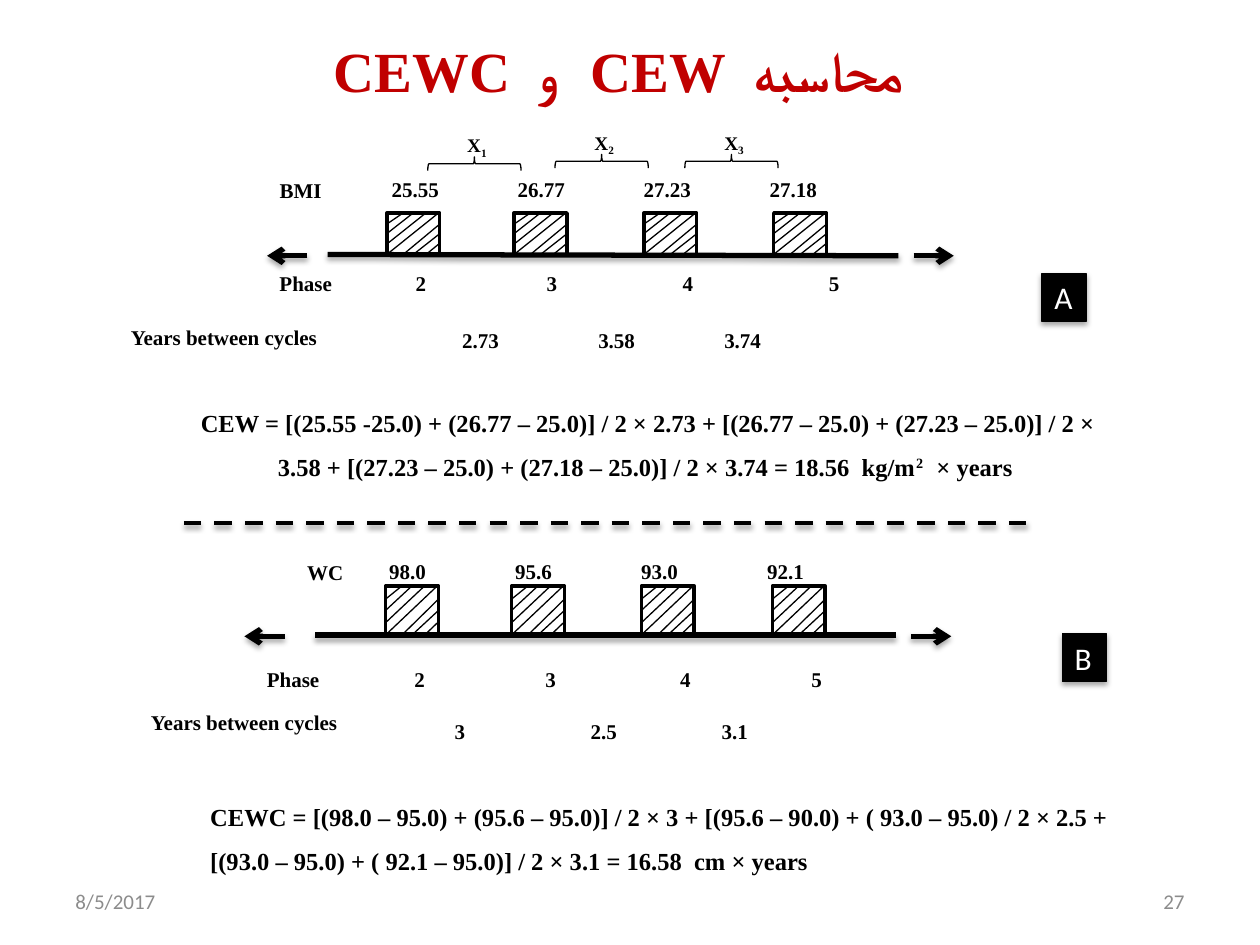
from pptx import Presentation
from pptx.dml.color import RGBColor
from pptx.enum import dml, shapes, text
from pptx.oxml import parse_xml
from pptx.oxml.ns import nsdecls
from pptx.util import Inches, Pt

BLACK = RGBColor(0, 0, 0)
WHITE = RGBColor(255, 255, 255)
RED = RGBColor(0xC0, 0, 0)
GRAY = RGBColor(0x8C, 0x8C, 0x8C)
SERIF, SANS = "Times New Roman", "Calibri"
LEFT, CENTER, RIGHT = text.PP_ALIGN.LEFT, text.PP_ALIGN.CENTER, text.PP_ALIGN.RIGHT
TOP, MIDDLE = text.MSO_ANCHOR.TOP, text.MSO_ANCHOR.MIDDLE

SHADOW = (
    f'<a:effectLst {nsdecls("a")}><a:outerShdw blurRad="39370" dist="22860" dir="5400000"'
    ' rotWithShape="0"><a:srgbClr val="000000"><a:alpha val="35000"/></a:srgbClr>'
    "</a:outerShdw></a:effectLst>"
)
NO_SHADOW = f'<a:effectLst {nsdecls("a")}/>'
ARROW = f'<a:tailEnd {nsdecls("a")} type="arrow"/>'

prs = Presentation()
prs.slide_width, prs.slide_height = Inches(10), Inches(7.5)
slide = prs.slides.add_slide(prs.slide_layouts[6])


def add_line(start, end, width, effect=NO_SHADOW, arrow=False, dash=None):
    points = [Inches(value) for value in (*start, *end)]
    line = slide.shapes.add_connector(shapes.MSO_CONNECTOR.STRAIGHT, *points)
    line.line.color.rgb = BLACK
    line.line.width = Pt(width)
    if dash:
        line.line.dash_style = dash
    if arrow:
        line.line._get_or_add_ln().append(parse_xml(ARROW))
    line._element.spPr.append(parse_xml(effect))


def add_text(box, runs, size=12, bold=True, color=BLACK, align=LEFT, anchor=TOP,
             wrap=True, spacing=None, tabs=()):
    """Add a text box; runs are (text, font, baseline in percent), tabs are in inches."""
    frame = slide.shapes.add_textbox(*map(Inches, box)).text_frame
    frame.word_wrap = wrap
    frame.vertical_anchor = anchor
    paragraph = frame.paragraphs[0]
    paragraph.alignment = align
    if spacing:
        paragraph.line_spacing = spacing
    if tabs:
        stops = "".join(f'<a:tab pos="{Inches(tab)}" algn="l"/>' for tab in tabs)
        paragraph._p.get_or_add_pPr().append(
            parse_xml(f'<a:tabLst {nsdecls("a")}>{stops}</a:tabLst>'))
    for wording, font, baseline in runs:
        run = paragraph.add_run()
        run.text = wording
        style = {"name": font, "size": Pt(size), "bold": bold}
        for attribute, value in style.items():
            setattr(run.font, attribute, value)
        run.font.color.rgb = color
        if baseline:
            run._r.get_or_add_rPr().set("baseline", str(baseline * 1000))


# Title and footer
add_text((0.48, 0.28, 9, 0.55),
         [(" CEWC  ", SERIF, 0), ("و  ", SANS, 0), ("CEW  ", SERIF, 0), ("محاسبه  ", SANS, 0)],
         size=32.4, color=RED, align=CENTER, anchor=MIDDLE)
for left, footer, align in [(0.5, "8/5/2017", LEFT), (7.17, "27", RIGHT)]:
    add_text((left, 6.95, 2.33, 0.4), [(footer, SANS, 0)],
             bold=False, color=GRAY, align=align, anchor=MIDDLE)

# Hatching of a phase box, as fractions of its width and height
HATCH = [
    ((0.31, 0), (0, 0.27)), ((0.5, 0), (0, 0.5)), ((0.71, 0.03), (0, 0.75)),
    ((0.95, 0.03), (0, 1)), ((1, 0.27), (0.31, 1)), ((1, 0.5), (0.5, 1)),
    ((1, 0.73), (0.74, 1)),
]
PHASE_WIDTH = 0.42

# Timelines: BMI above, waist circumference below
timelines = [
    {"phases": (3.07, 4.08, 5.11, 6.14), "top": 1.69, "height": 0.33,
     "axis": ((2.6, 2.02), (7.13, 2.03)), "arrow_y": 2.03, "arrows": ((2.44, 2.12), (7.25, 7.57)),
     "badge": ("A", 8.27, 2.17)},
    {"phases": (3.06, 4.06, 5.09, 6.13), "top": 4.65, "height": 0.39,
     "axis": ((2.5, 5.04), (7.11, 5.04)), "arrow_y": 5.05, "arrows": ((2.26, 1.94), (7.23, 7.55)),
     "badge": ("B", 8.43, 5.03)},
]
for timeline in timelines:
    top, height = timeline["top"], timeline["height"]
    for left in timeline["phases"]:
        for start, end in HATCH:
            add_line(*[(left + x * PHASE_WIDTH, top + y * height) for x, y in (start, end)], 0.75)
        phase = slide.shapes.add_shape(
            shapes.MSO_SHAPE.RECTANGLE, *map(Inches, (left, top, PHASE_WIDTH, height)))
        phase.shadow.inherit = False
        phase.fill.background()
        phase.line.color.rgb = BLACK
        phase.line.width = Pt(2)

    add_line(*timeline["axis"], 3, SHADOW)
    for start, end in timeline["arrows"]:
        y = timeline["arrow_y"]
        add_line((start, y), (end, y), 3, SHADOW, arrow=True)

    letter, left, badge_top = timeline["badge"]
    badge = slide.shapes.add_shape(
        shapes.MSO_SHAPE.RECTANGLE, *map(Inches, (left, badge_top, 0.35, 0.38)))
    badge.fill.solid()
    badge.fill.fore_color.rgb = BLACK
    badge.line.color.rgb = BLACK
    badge.line.width = Pt(0.75)
    badge._element.spPr.append(parse_xml(SHADOW))
    badge.text_frame.word_wrap = False
    badge.text_frame.text = letter
    badge.text_frame.paragraphs[0].alignment = LEFT
    letter_font = badge.text_frame.paragraphs[0].runs[0].font
    letter_font.name, letter_font.size = SANS, Pt(18)
    letter_font.color.rgb = WHITE

# Labels and values, with tab stops measured from the text edge
rows = [
    ((2.12, 1.36, 0.75, 0.28), "BMI", ()),
    ((3.01, 1.35, 5.79, 0.28), "25.55\t26.77\t27.23\t27.18", (1, 2, 3)),
    ((2.12, 2.1, 6.86, 0.3), "Phase\t2\t3\t4\t5", (1.08, 2.12, 3.2, 4.36)),
    ((0.94, 2.53, 1.8, 0.28), "Years between cycles", ()),
    ((3.07, 2.55, 5.04, 0.28), "\t2.73\t3.58\t3.74", (0.5, 1.58, 2.58)),
    ((2.34, 4.39, 0.56, 0.28), "WC", ()),
    ((2.99, 4.38, 5.79, 0.3), "98.0\t95.6\t93.0\t92.1", (1, 2, 3)),
    ((2.02, 5.24, 6.92, 0.28), "Phase\t2\t3\t4\t5", (1.17, 2.21, 3.28, 4.32)),
    ((1.1, 5.58, 1.8, 0.28), "Years between cycles", ()),
    ((3.06, 5.65, 5.04, 0.3), "\t3\t2.5\t3.1", (0.45, 1.53, 2.57)),
]
for box, wording, tabs in rows:
    add_text(box, [(wording, SERIF, 0)], tabs=tabs)

# Intervals X1 to X3
for number, (left, top) in enumerate([(3.71, 0.93), (4.72, 0.91), (5.75, 0.91)], start=1):
    brace = slide.shapes.add_shape(
        shapes.MSO_SHAPE.LEFT_BRACE, *map(Inches, (left, top, 0.11, 0.74)))
    brace.rotation = 90
    brace.shadow.inherit = False
    brace.fill.background()
    brace.line.color.rgb = BLACK
    brace.line.width = Pt(0.75)
    add_text((left - 0.1, top + 0.08, 0.37, 0.27),
             [("X", SERIF, 0), (str(number), SERIF, -25)], size=11, wrap=False)

# Formulas and the divider between them
add_text((1.49, 3.07, 7.31, 1.11), [
    ("CEW = [(25.55 -25.0) + (26.77 – 25.0)] / 2 × 2.73 + [(26.77 – 25.0) + (27.23 – 25.0)] / 2 × "
     "3.58 + [(27.23 – 25.0) + (27.18 – 25.0)] / 2 × 3.74 = 18.56  kg/m", SERIF, 0),
    ("2  ", SERIF, 30), (" × years ", SERIF, 0)], size=14, align=CENTER, spacing=1.5)
add_line((1.46, 4.15), (8.19, 4.15), 2.5, SHADOW, dash=dml.MSO_LINE.DASH)
add_text((1.57, 6.2, 7.57, 1.11), [
    ("CEWC = [(98.0 – 95.0) + (95.6 – 95.0)] / 2 × 3 + [(95.6 – 90.0) + ( 93.0 – 95.0) / 2 × 2.5 + "
     "[(93.0 – 95.0) + ( 92.1 – 95.0)] / 2 × 3.1 = 16.58  cm × years", SERIF, 0)],
    size=14, spacing=1.5)

prs.save("out.pptx")
